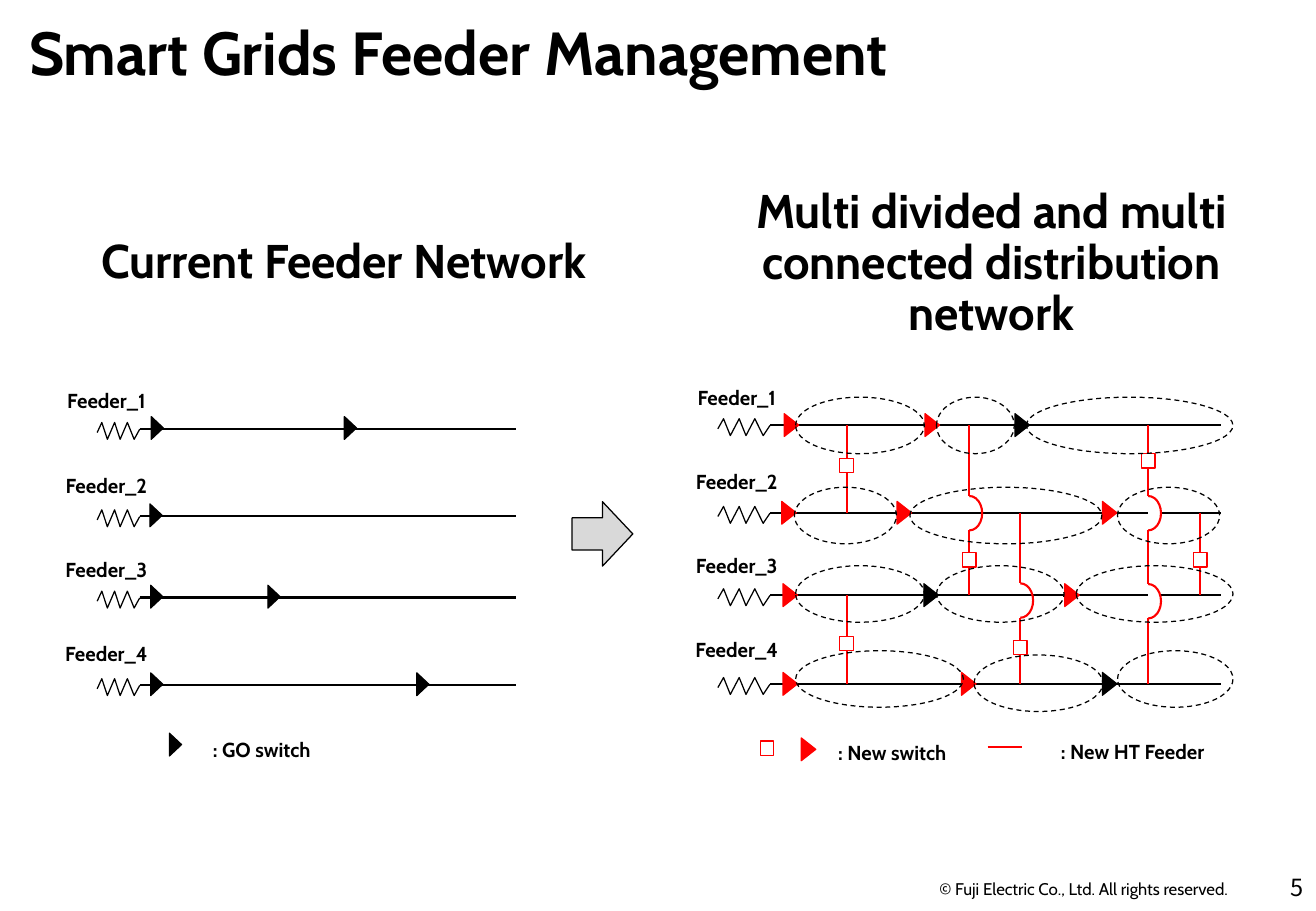
from pptx import Presentation
from pptx.dml.color import RGBColor
from pptx.enum.dml import MSO_LINE
from pptx.enum.shapes import MSO_CONNECTOR, MSO_SHAPE
from pptx.enum.text import MSO_ANCHOR as ANCHOR, MSO_AUTO_SIZE as AUTO_SIZE, PP_ALIGN as ALIGN
from pptx.oxml.ns import qn
from pptx.util import Pt
from lxml.etree import SubElement

COLORS = {"black": "000000", "red": "FF0000", "white": "FFFFFF", "grey": "D9D9D9"}
FONT = "Cabin"
THIN, THICK = 0.75, 1.25
JUMP_HALF = 10.2
LABEL_STEP = 49.9
LABEL_INSETS = (5.8, 0.7)
ZIGZAG = [(0, 0.6), (0.11, 0), (0.24, 1), (0.41, 0),
          (0.54, 1), (0.71, 0), (0.87, 1), (1, 0.4)]

CURRENT_ROWS = [254.2, 306, 354.2, 406.1]
CURRENT_SWITCHES = [[93.2, 207.7], [92.5], [92.9, 162.4], [92.9, 250.6]]

NEW_ROWS = [252, 304, 352.8, 405.4]
NEW_SWITCHES = [
    [(469.1, "red"), (552.6, "red"), (605.9, "black")],
    [(467.6, "red"), (536, "red"), (657.7, "red")],
    [(468.4, "red"), (551.9, "black"), (635.4, "red")],
    [(468.4, "red"), (574.2, "red"), (657.7, "black")],
]
SECTIONS = [
    (252.2, 471.6, 76.3), (252.2, 555.1, 46.1), (252.2, 608.4, 122.4),
    (305.6, 470.9, 60.5), (305.6, 539.3, 113.8), (305.6, 662.4, 60.5),
    (352.1, 471.6, 76.3), (352.1, 555.1, 75.6), (352.1, 637.9, 92.9),
    (402.5, 471.6, 99.4), (405, 577.4, 76.3), (402.5, 662.4, 68.4),
]
TIES = [
    (501.8, 0, 1, 275.8, [], None),
    (501.8, 2, 3, 381.6, [], None),
    (574.6, 0, 2, 331.9, [304.2], None),
    (604.8, 1, 3, 383.8, [356], None),
    (680.6, 0, 3, 273.2, [304.2, 356.4], "white"),
    (711.4, 1, 2, 331.9, [], None),
]


def color(name):
    return RGBColor.from_string(COLORS[name])


def style(shape, fill, line, width=THIN):
    shape.shadow.inherit = False
    if fill:
        shape.fill.solid()
        shape.fill.fore_color.rgb = color(fill)
    else:
        shape.fill.background()
    shape.line.color.rgb = color(line)
    shape.line.width = Pt(width)


def add_centred(page, kind, x, y, width, height, fill, line, weight=THIN):
    shape = page.shapes.add_shape(
        kind, Pt(x - width / 2), Pt(y - height / 2), Pt(width), Pt(height))
    style(shape, fill, line, weight)
    return shape


def add_line(page, start, end, line, width=THICK):
    connector = page.shapes.add_connector(
        MSO_CONNECTOR.STRAIGHT, *[Pt(value) for value in (*start, *end)])
    connector.line.color.rgb = color(line)
    connector.line.width = Pt(width)
    SubElement(connector._element.spPr, qn("a:effectLst"))


def write(box, text, size, bold, align, font=FONT):
    para = box.text_frame.paragraphs[0]
    para.alignment = align
    run = para.add_run()
    run.text = text
    run.font.name = font
    run.font.size = Pt(size)
    run.font.bold = bold
    run.font.color.rgb = color("black")
    return para


def add_text(page, place, text, size, bold=True, align=ALIGN.CENTER, font=FONT,
             insets=None, wrap=True):
    box = page.shapes.add_textbox(*[Pt(value) for value in place])
    frame = box.text_frame
    frame.word_wrap = wrap
    if insets:
        frame.margin_left = frame.margin_right = Pt(insets[0])
        frame.margin_top = frame.margin_bottom = Pt(insets[1])
    return box, write(box, text, size, bold, align, font)


def add_caption(page, place, text, size):
    box, para = add_text(page, place, text, size)
    box.text_frame.vertical_anchor = ANCHOR.MIDDLE
    para.line_spacing = 0.9


def add_title(page, text):
    title = page.shapes.title
    title.left, title.top, title.width, title.height = Pt(10), Pt(5), Pt(617.8), Pt(46.8)
    title.text_frame.auto_size = AUTO_SIZE.NONE
    title.text_frame.vertical_anchor = ANCHOR.TOP
    write(title, text, 36, True, ALIGN.LEFT)


def add_feeder(page, left, coil_width, right, y):
    points = [(Pt(left + x * coil_width), Pt(y - 3.8 + dy * 10)) for x, dy in ZIGZAG]
    builder = page.shapes.build_freeform(*points[0], scale=1.0)
    builder.add_line_segments(points[1:], close=False)
    style(builder.convert_to_shape(), None, "black")
    add_line(page, (left + coil_width, y), (right, y), "black")


def add_labels(page, left, top, width, height):
    for index in range(4):
        add_text(page, (left, top + index * LABEL_STEP, width, height),
                 f"Feeder_{index + 1}", 12, insets=LABEL_INSETS)


def add_switch(page, x, y, tint, depth):
    add_centred(page, MSO_SHAPE.ISOSCELES_TRIANGLE, x, y, 13.5, depth, tint, tint).rotation = 90


def add_square(page, x, y):
    add_centred(page, MSO_SHAPE.RECTANGLE, x, y, 8, 8.4, "white", "red")


def add_tie(page, x, top, bottom, square_y, jumps, fill):
    start = top
    for y in jumps:
        add_line(page, (x, start), (x, y - JUMP_HALF), "red")
        arc = add_centred(page, MSO_SHAPE.ARC, x, y, 15.2, 2 * JUMP_HALF, fill, "red", THICK)
        arc.adjustments[0], arc.adjustments[1] = 162, 54
        start = y + JUMP_HALF
    add_line(page, (x, start), (x, bottom), "red")
    add_square(page, x, square_y)


def add_section(page, y, left, width):
    oval = add_centred(page, MSO_SHAPE.OVAL, left + width / 2, y, width, 33.5, None, "black")
    oval.line.dash_style = MSO_LINE.DASH


def add_current_network(page):
    add_caption(page, (21.6, 134.6, 364.3, 43.2), "Current Feeder Network", 28)
    for y, switches in zip(CURRENT_ROWS, CURRENT_SWITCHES):
        add_feeder(page, 57.6, 25.2, 305.6, y)
        for x in switches:
            add_switch(page, x, y - 0.5, "black", 7.2)
    add_labels(page, 27.4, 229.7, 71.3, 14.4)
    add_switch(page, 104, 441.4, "black", 7.2)
    add_caption(page, (107.3, 423.4, 95.8, 43.2), ": GO switch", 12)


def add_new_network(page):
    add_caption(page, (434.2, 105.8, 306.7, 101.5),
                "Multi divided and multi connected distribution network", 28)
    for y, switches in zip(NEW_ROWS, NEW_SWITCHES):
        add_feeder(page, 425.5, 30.9, 723.6, y)
        for x, tint in switches:
            add_switch(page, x, y, tint, 8.6)
    for x, first, last, square_y, jumps, fill in TIES:
        add_tie(page, x, NEW_ROWS[first], NEW_ROWS[last], square_y, jumps, fill)
    add_labels(page, 398.9, 227.5, 75.6, 18.7)
    for section in SECTIONS:
        add_section(page, *section)
    add_square(page, 454.7, 443.5)
    add_switch(page, 479.2, 444.2, "red", 8.6)
    add_caption(page, (481, 425.5, 95.8, 43.2), ": New switch", 12)
    add_line(page, (585.4, 442.8), (605.5, 442.8), "red", THIN)
    add_caption(page, (607.7, 424.8, 127.4, 43.2), ": New HT Feeder", 12)


def main():
    deck = Presentation()
    deck.slide_width, deck.slide_height = Pt(780), Pt(540)
    page = deck.slides.add_slide(deck.slide_layouts[5])
    add_title(page, "Smart Grids Feeder Management")
    add_current_network(page)
    add_new_network(page)
    add_centred(page, MSO_SHAPE.RIGHT_ARROW, 357.1, 316.5, 36, 38.2, "grey", "black")
    add_text(page, (539.3, 517, 205.9, 19.4),
             "© Fuji Electric Co., Ltd. All rights reserved.", 10, bold=False, wrap=False)
    add_text(page, (735.8, 514.1, 44.2, 25.9), "5", 14, bold=False,
             align=ALIGN.RIGHT, font="Noto Sans CJK JP")
    deck.save("out.pptx")


if __name__ == "__main__":
    main()
